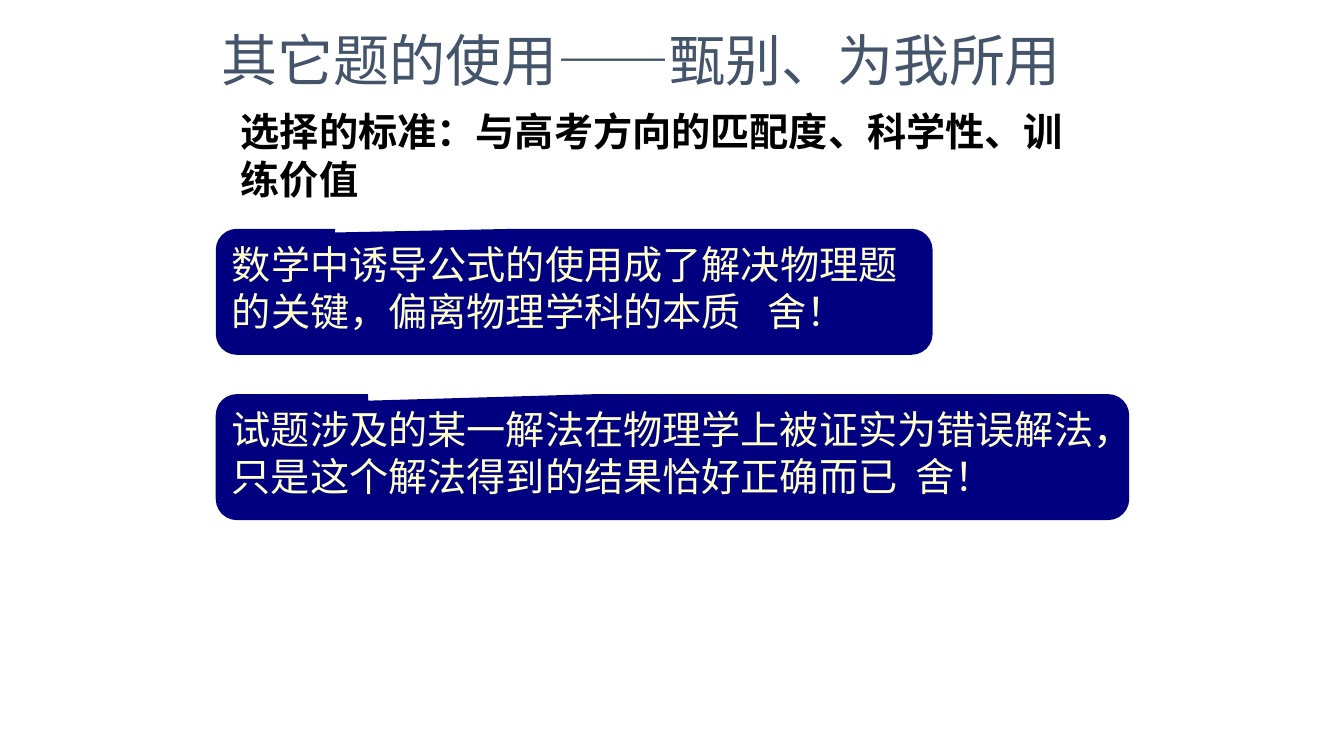
from pptx import Presentation
from pptx.dml.color import RGBColor
from pptx.enum import shapes, text
from pptx.util import Inches, Pt

NAVY = RGBColor(0x00, 0x00, 0x80)
CREAM = RGBColor(0xFF, 0xFF, 0xCC)
SLATE = RGBColor(0x44, 0x54, 0x6A)
BLACK = RGBColor(0x00, 0x00, 0x00)

TITLE_FONT = {"name": "Calibri", "size": Pt(40)}
CRITERIA_FONT = {"name": "Arial", "size": Pt(28), "bold": True}
VERDICT_FONT = {"name": "Noto Sans CJK SC", "size": Pt(28)}

CALLOUT_LEFT, CALLOUT_HEIGHT = 2.14, 1.25
VERDICTS = [
    (2.27, 7.11, (-0.334, -0.471, 0.167),
     "数学中诱导公式的使用成了解决物理题的关键，偏离物理学科的本质   舍！"),
    (3.91, 9.06, (-0.333, -0.448, 0.167),
     "试题涉及的某一解法在物理学上被证实为错误解法，只是这个解法得到的结果恰好正确而已  舍！"),
]


def write_text(shape, wording, font, color, line_spacing=1.0):
    frame = shape.text_frame
    frame.word_wrap = True
    frame.vertical_anchor = text.MSO_ANCHOR.TOP
    paragraph = frame.paragraphs[0]
    paragraph.alignment = text.PP_ALIGN.LEFT
    paragraph.line_spacing = line_spacing
    run = paragraph.add_run()
    run.text = wording
    for attribute, value in font.items():
        setattr(run.font, attribute, value)
    run.font.color.rgb = color


def add_label(slide, box, wording, font, color, line_spacing=1.0):
    label = slide.shapes.add_textbox(*map(Inches, box))
    write_text(label, wording, font, color, line_spacing)


def add_callout(slide, top, width, adjustments, wording):
    callout = slide.shapes.add_shape(
        shapes.MSO_SHAPE.ROUNDED_RECTANGULAR_CALLOUT,
        Inches(CALLOUT_LEFT), Inches(top), Inches(width), Inches(CALLOUT_HEIGHT))
    for index, value in enumerate(adjustments):
        callout.adjustments[index] = value
    callout.shadow.inherit = False
    callout.fill.solid()
    callout.fill.fore_color.rgb = NAVY
    callout.line.fill.background()
    write_text(callout, wording, VERDICT_FONT, CREAM)


def main():
    presentation = Presentation()
    presentation.slide_width = Inches(13.33)
    presentation.slide_height = Inches(7.5)
    slide = presentation.slides.add_slide(presentation.slide_layouts[6])
    add_label(slide, (2.1, 0.28, 9, 1.25), "其它题的使用——甄别、为我所用",
              TITLE_FONT, SLATE, line_spacing=0.9)
    for verdict in VERDICTS:
        add_callout(slide, *verdict)
    add_label(slide, (2.29, 1.02, 8.59, 1.04),
              "选择的标准：与高考方向的匹配度、科学性、训练价值",
              CRITERIA_FONT, BLACK)
    presentation.save("out.pptx")


if __name__ == "__main__":
    main()
